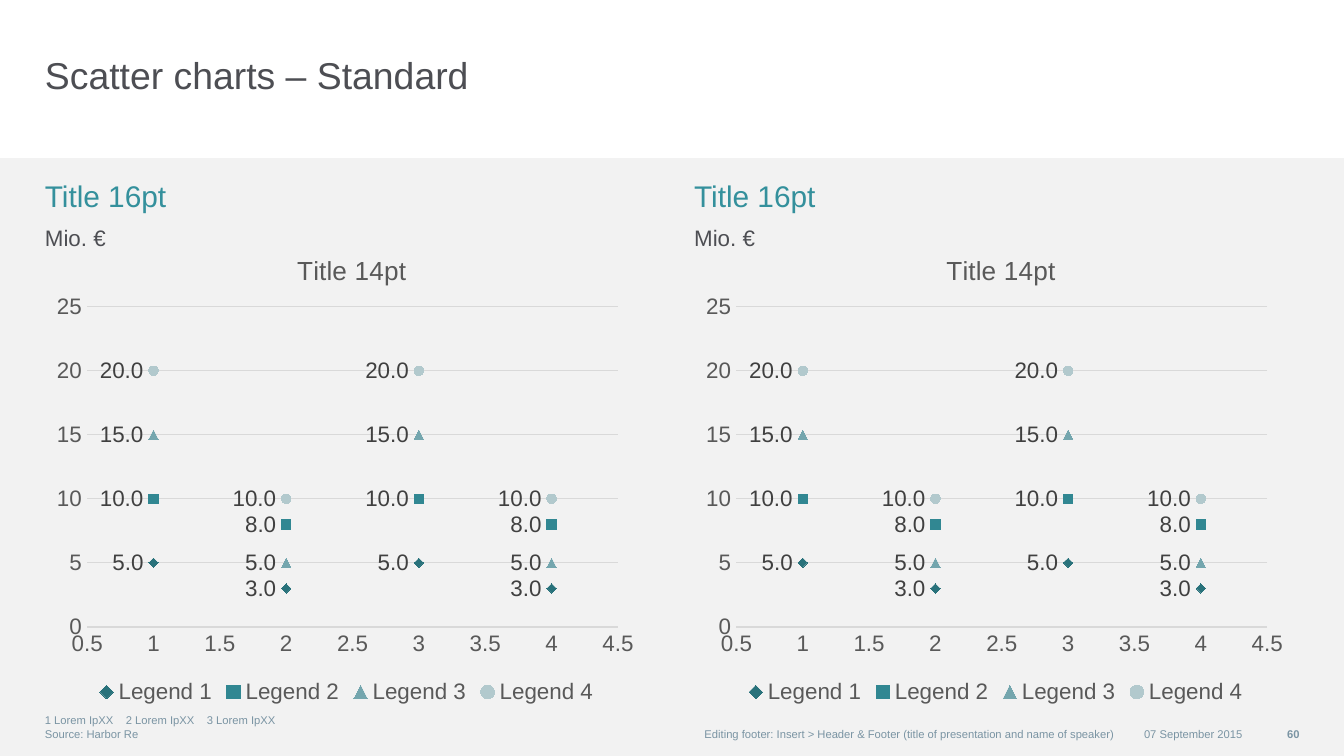
from lxml import etree
from pptx import Presentation
from pptx.chart.data import XyChartData
from pptx.chart.datalabel import DataLabels
from pptx.dml.color import RGBColor
from pptx.enum.chart import XL_CHART_TYPE, XL_LABEL_POSITION, XL_LEGEND_POSITION, XL_MARKER_STYLE, XL_TICK_MARK
from pptx.enum.shapes import MSO_SHAPE
from pptx.enum.text import MSO_ANCHOR, PP_ALIGN
from pptx.oxml import parse_xml
from pptx.oxml.ns import nsdecls, qn
from pptx.util import Cm, Pt


def style(font, size, color, bold=False):
    font.name = "Arial"
    font.size = Pt(size)
    font.bold = bold
    font.color.rgb = RGBColor.from_string(color)


def text(x, y, w, h, lines, size, color, anchor=MSO_ANCHOR.TOP, align=PP_ALIGN.LEFT, bold=False, wrap=True):
    tf = s.shapes.add_textbox(Cm(x), Cm(y), Cm(w), Cm(h)).text_frame
    tf.margin_left = tf.margin_right = tf.margin_top = tf.margin_bottom = 0
    tf.word_wrap = wrap
    tf.vertical_anchor = anchor
    for i, line in enumerate(lines):
        p = tf.paragraphs[0] if i == 0 else tf.add_paragraph()
        p.alignment = align
        r = p.add_run()
        r.text = line
        style(r.font, size, color, bold)
    return tf


prs = Presentation()
prs.slide_width, prs.slide_height = Cm(25.4), Cm(14.29)
s = prs.slides.add_slide(prs.slide_layouts[6])

sp = s.shapes.add_shape(MSO_SHAPE.RECTANGLE, 0, Cm(2.99), prs.slide_width, Cm(11.3))
sp.shadow.inherit = False
sp.fill.solid()
sp.fill.fore_color.rgb = RGBColor.from_string("F2F2F2")
sp.line.fill.background()

text(0.85, 0.99, 19, 1.55, ["Scatter charts – Standard"], 20, "4D4E53")

series = [
    ("Legend 1", (5, 3, 5, 3), "29727B", XL_MARKER_STYLE.DIAMOND),
    ("Legend 2", (10, 8, 10, 8), "318792", XL_MARKER_STYLE.SQUARE),
    ("Legend 3", (15, 5, 15, 5), "74A6AE", XL_MARKER_STYLE.TRIANGLE),
    ("Legend 4", (20, 10, 20, 10), "B2C9CD", XL_MARKER_STYLE.CIRCLE),
]

for x in (0.85, 13.12):
    data = XyChartData()
    for name, values, color, marker in series:
        ser = data.add_series(name)
        for i, value in enumerate(values, 1):
            ser.add_data_point(i, value)
    chart = s.shapes.add_chart(XL_CHART_TYPE.XY_SCATTER, Cm(x), Cm(4.24), Cm(11.4), Cm(9.17), data).chart
    style(chart.font, 12, "000000")

    chart.has_title = True
    r = chart.chart_title.text_frame.paragraphs[0].add_run()
    r.text = "Title 14pt"
    style(r.font, 14, "595959")
    chart.has_legend = True
    chart.legend.position = XL_LEGEND_POSITION.BOTTOM
    chart.legend.include_in_layout = False
    style(chart.legend.font, 12, "595959")

    for axis, low, high, step in ((chart.category_axis, 0.5, 4.5, 0.5), (chart.value_axis, 0, 25, 5)):
        axis.minimum_scale, axis.maximum_scale, axis.major_unit = low, high, step
        axis.major_tick_mark = axis.minor_tick_mark = XL_TICK_MARK.NONE
        axis.tick_labels.number_format = "General"
        axis.tick_labels.number_format_is_linked = False
        style(axis.tick_labels.font, 12, "595959")
    chart.category_axis.has_major_gridlines = False
    chart.value_axis.has_major_gridlines = True
    chart.value_axis.format.line.fill.background()
    for line in (chart.category_axis.format.line, chart.value_axis.major_gridlines.format.line):
        line.color.rgb = RGBColor.from_string("D9D9D9")
        line.width = Pt(0.75)

    for ser, (name, values, color, marker) in zip(chart.plots[0].series, series):
        ser.format.line.fill.background()
        ser.marker.style = marker
        ser.marker.size = 5
        ser.marker.format.fill.solid()
        ser.marker.format.fill.fore_color.rgb = RGBColor.from_string(color)
        ser.marker.format.line.color.rgb = RGBColor.from_string(color)
        labels = DataLabels(ser._element.get_or_add_dLbls())
        labels.show_value = True
        labels.position = XL_LABEL_POSITION.LEFT
        labels.number_format = "#,##0.0"
        labels.number_format_is_linked = False
        style(labels.font, 12, "404040")

    title = chart.chart_title._element
    area = chart._chartSpace.find(".//" + qn("c:plotArea"))
    places = ((title, {"x": 0.41, "y": 0.05}), (area, {"x": 0.07, "y": 0.17, "w": 0.88, "h": 0.66}))
    for parent, place in places:
        for old in parent.findall(qn("c:layout")):
            parent.remove(old)
        layout = parse_xml(f"<c:layout {nsdecls('c')}><c:manualLayout/></c:layout>")
        if parent is area:
            etree.SubElement(layout[0], qn("c:layoutTarget")).set("val", "inner")
        for key in ("x", "y"):
            etree.SubElement(layout[0], qn(f"c:{key}Mode")).set("val", "edge")
        for key, value in place.items():
            etree.SubElement(layout[0], qn(f"c:{key}")).set("val", str(value))
        parent.insert(1 if parent is title else 0, layout)

    text(x, 3.35, 11.43, 0.89, ["Title 16pt"], 16, "34909C")
    text(x, 4.24, 1.17, 0.51, ["Mio. €"], 12, "4D4E53", wrap=False)

notes = ["1 Lorem IpXX\t2 Lorem IpXX\t3 Lorem IpXX", "Source: Harbor Re"]
tf = text(0.85, 13.59, 10, 0.41, notes, 6, "7A94A3", MSO_ANCHOR.BOTTOM)
tabs = etree.SubElement(tf.paragraphs[0]._p.get_or_add_pPr(), qn("a:tabLst"))
for i in (1, 2):
    tab = etree.SubElement(tabs, qn("a:tab"))
    tab.set("pos", str(Cm(1.53 * i)))
    tab.set("algn", "l")

footers = [
    (11.05, 10, "Editing footer: Insert > Header & Footer (title of presentation and name of speaker)", False),
    (21.16, 2.32, "07 September 2015", False),
    (23.47, 1.09, "60", True),
]
for x, w, line, bold in footers:
    text(x, 13.6, w, 0.56, [line], 6, "7A94A3", MSO_ANCHOR.MIDDLE, PP_ALIGN.RIGHT, bold)

prs.save("out.pptx")
